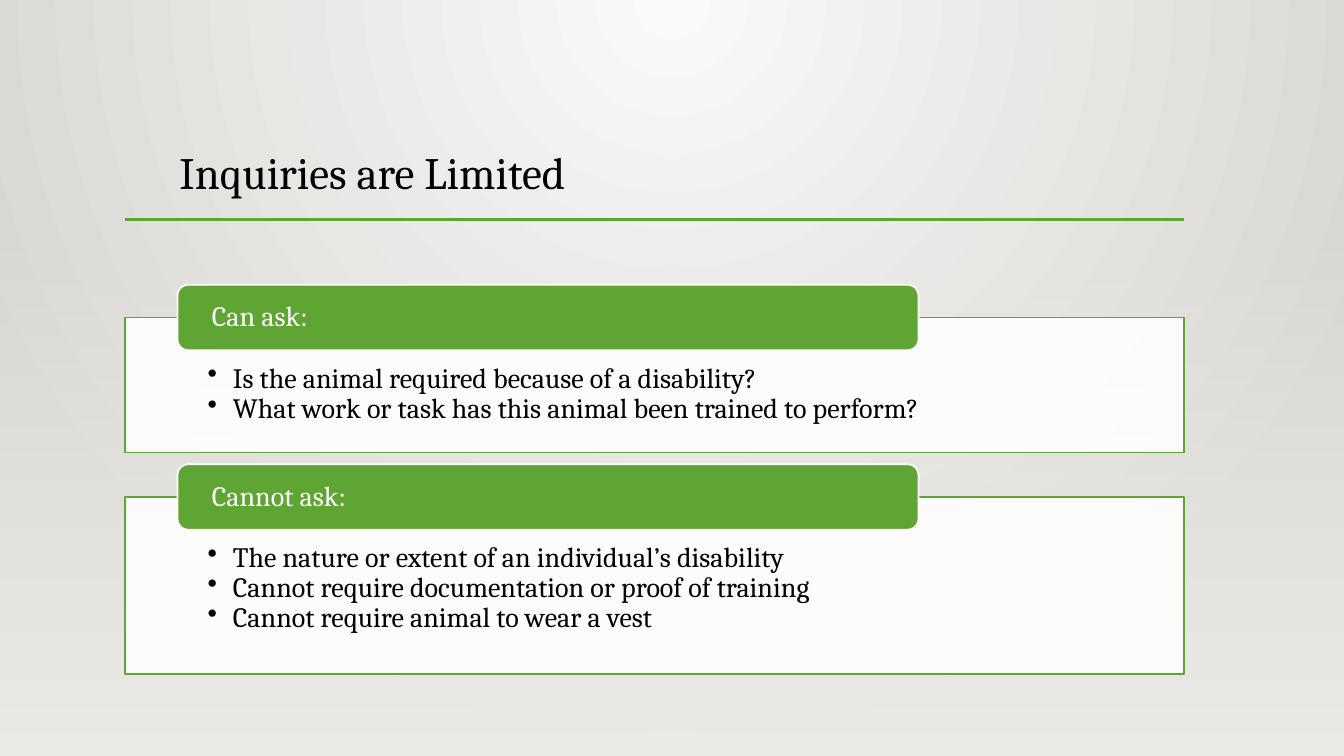
from lxml import etree
from pptx import Presentation
from pptx.dml import color
from pptx.enum import shapes, text
from pptx.oxml import ns
from pptx.util import Inches, Pt

COLORS = {"green": "5FA534", "white": "FFFFFF", "black": "000000",
          "light": "FAFAF9", "grey": "D7D5D2", "floor": "EDEBE7"}


def rgb(name):
    return color.RGBColor.from_string(COLORS[name])


def add(parent, tag, **attrs):
    return etree.SubElement(parent, ns.qn(tag), attrs)


def put_text(p, words, size=20, ink="black", font="Cambria", bullet=None):
    """Write words into a paragraph with the given format."""
    if bullet:
        pPr = p._p.get_or_add_pPr()
        pPr.set("marL", str(Inches(0.25)))
        pPr.set("indent", str(Inches(-0.25)))
        add(pPr, "a:buChar", char=bullet)
    p.alignment = text.PP_ALIGN.LEFT
    p.line_spacing = 0.9
    r = p.add_run()
    r.text = words
    r.font.size, r.font.name = Pt(size), font
    r.font.color.rgb = rgb(ink)


class Deck:
    def __init__(self):
        self.prs = Presentation()
        self.prs.slide_width, self.prs.slide_height = Inches(13.33), Inches(7.5)
        self.s = self.prs.slides.add_slide(self.prs.slide_layouts[5])

    def gradient(self, owner, stops, direction, center=None):
        """Set gradient stops (position, colour, alpha) and direction."""
        grad = owner.element.find(".//" + ns.qn("a:gradFill"))
        for child in list(grad):
            grad.remove(child)
        gs_list = add(grad, "a:gsLst")
        for pos, name, alpha in stops:
            gs = add(gs_list, "a:gs", pos=str(pos * 1000))
            clr = add(gs, "a:srgbClr", val=COLORS[name])
            if alpha < 100:
                add(clr, "a:alpha", val=str(alpha * 1000))
        shade = add(grad, **direction)
        if center:
            add(shade, "a:fillToRect", **center)

    def background(self):
        self.s.background.fill.gradient()
        self.gradient(self.s, [(0, "light", 100), (100, "grey", 100)],
                      {"tag": "a:path", "path": "circle"},
                      {"l": "43000", "t": "0", "r": "43000", "b": "100000"})

    def shape(self, kind, box, fill=None, line=None, alpha=100):
        sp = self.s.shapes.add_shape(kind, *map(Inches, box))
        sp.shadow.inherit = False
        if fill:
            sp.fill.solid()
            sp.fill.fore_color.rgb = rgb(fill)
            if alpha < 100:
                clr = sp.element.spPr.find(".//" + ns.qn("a:srgbClr"))
                add(clr, "a:alpha", val=str(alpha * 1000))
        if line:
            sp.line.color.rgb = rgb(line)
            sp.line.width = Pt(1.25)
        else:
            sp.line.fill.background()
        return sp

    def floor(self):
        sp = self.shape(shapes.MSO_SHAPE.RECTANGLE, (0, 2.21, 13.33, 5.29))
        sp.fill.gradient()
        self.gradient(sp, [(0, "floor", 0), (100, "floor", 100)],
                      {"tag": "a:lin", "ang": "5400000", "scaled": "0"})

    def title(self, words, box):
        sp = self.s.shapes.title
        sp.left, sp.top, sp.width, sp.height = map(Inches, box)
        tf = sp.text_frame
        tf.vertical_anchor = text.MSO_ANCHOR.BOTTOM
        tf.auto_size = text.MSO_AUTO_SIZE.NONE
        put_text(tf.paragraphs[0], words, size=32)

    def rule(self, x1, x2, y):
        ln = self.s.shapes.add_connector(
            shapes.MSO_CONNECTOR.STRAIGHT, *map(Inches, (x1, y, x2, y)))
        ln.line.color.rgb = rgb("green")
        ln.line.width = Pt(2.5)
        add(ln.element.spPr, "a:effectLst")

    def fill_frame(self, sp, lines, insets, anchor, **fmt):
        tf = sp.text_frame
        tf.word_wrap = True
        tf.vertical_anchor = anchor
        (tf.margin_left, tf.margin_top,
         tf.margin_right, tf.margin_bottom) = map(Inches, insets)
        for i, words in enumerate(lines):
            p = tf.add_paragraph() if i else tf.paragraphs[0]
            put_text(p, words, **fmt)

    def panel(self, heading, lines, top, height):
        """Bulleted box with a heading bar straddling its top edge."""
        body = self.shape(shapes.MSO_SHAPE.RECTANGLE, (1.24, top, 10.5, height),
                          "white", "green", alpha=90)
        self.fill_frame(body, lines, (0.82, 0.46, 0.82, 0.16),
                        text.MSO_ANCHOR.TOP, bullet="•")
        bar = self.shape(shapes.MSO_SHAPE.ROUNDED_RECTANGLE,
                         (1.76, top - 0.325, 7.35, 0.65), "green", "white")
        self.fill_frame(bar, [heading], (0.31, 0, 0.31, 0),
                        text.MSO_ANCHOR.MIDDLE, ink="white")


def main():
    deck = Deck()
    # Backdrop
    deck.background()
    deck.floor()
    # Title and rule
    deck.title("Inquiries are Limited", (1.68, 0.88, 10.41, 1.15))
    deck.rule(1.24, 11.74, 2.18)
    # Question panels
    deck.panel("Can ask:", [
        "Is the animal required because of a disability?",
        "What work or task has this animal been trained to perform?",
    ], 3.15, 1.34)
    deck.panel("Cannot ask:", [
        "The nature or extent of an individual’s disability",
        "Cannot require documentation or proof of training",
        "Cannot require animal to wear a vest",
    ], 4.93, 1.76)
    deck.prs.save("out.pptx")


if __name__ == "__main__":
    main()
